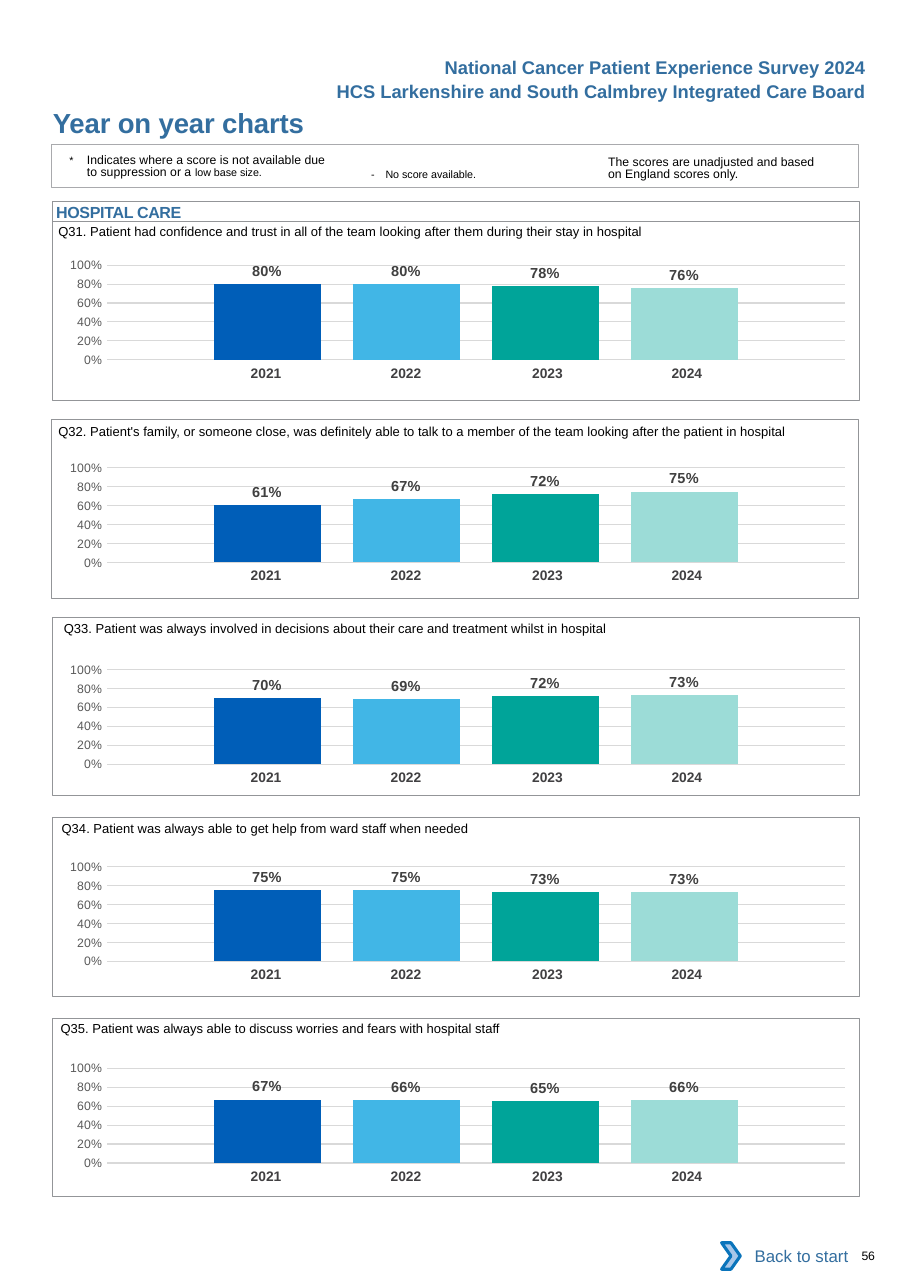
from lxml import etree
from pptx import Presentation
from pptx.chart.data import CategoryChartData
from pptx.dml.color import RGBColor
from pptx.enum.chart import XL_CHART_TYPE as CHART, XL_LABEL_POSITION as LABEL, XL_TICK_MARK as TICK
from pptx.enum.shapes import MSO_SHAPE as SHAPE
from pptx.enum.text import MSO_ANCHOR as ANCHOR, PP_ALIGN as ALIGN
from pptx.oxml.ns import qn
from pptx.util import Inches, Pt

color = RGBColor.from_string
BLUE, GREY = "336E9F", "939598"
YEARS = {"2021": "005EB8", "2022": "41B6E6", "2023": "00A499", "2024": "9CDCD7"}
YEAR_WIDTHS = [1.27, 1.27, 1.34, 1.27]
YEAR_RIGHT_INSETS = [0, 0, 0.04, 0.12]
PLOT_AREA = {"x": 0.079, "y": 0.145, "w": 0.915, "h": 0.666}
NO_TABLE_STYLE = "{2D5ABB26-0587-4C30-8999-92F81FD0307C}"

# question, its left and top, panel left and top, chart top, scores
QUESTIONS = [
    ("Q31. Patient had confidence and trust in all of the team looking after them during "
     "their stay in hospital", 0.53, 1.94, 0.48, 2.01, 2.22, (0.80, 0.80, 0.78, 0.76)),
    ("Q32. Patient's family, or someone close, was definitely able to talk to a member of the "
     "team looking after the patient in hospital",
     0.53, 3.75, 0.47, 3.81, 4.06, (0.61, 0.67, 0.72, 0.75)),
    ("Q33. Patient was always involved in decisions about their care and treatment whilst in "
     "hospital", 0.58, 5.54, 0.48, 5.6, 5.89, (0.70, 0.69, 0.72, 0.73)),
    ("Q34. Patient was always able to get help from ward staff when needed",
     0.56, 7.36, 0.48, 7.42, 7.68, (0.75, 0.75, 0.73, 0.73)),
    ("Q35. Patient was always able to discuss worries and fears with hospital staff",
     0.55, 9.17, 0.48, 9.24, 9.51, (0.67, 0.66, 0.65, 0.66)),
]

prs = Presentation()
prs.slide_width, prs.slide_height = Inches(8.26), Inches(11.69)
s = prs.slides.add_slide(prs.slide_layouts[6])


def add_box(left, top, width, height, shape=None, fill=None, line=None, weight=0.5,
            insets=(0, 0, 0, 0)):
    """Add a text box, or a preset shape when one is given."""
    place = [Inches(v) for v in (left, top, width, height)]
    if shape is None:
        sp = s.shapes.add_textbox(*place)
    else:
        sp = s.shapes.add_shape(shape, *place)
        sp.shadow.inherit = False
    if fill:
        sp.fill.solid()
        sp.fill.fore_color.rgb = color(fill)
    else:
        sp.fill.background()
    if line:
        sp.line.color.rgb = color(line)
        sp.line.width = Pt(weight)
    else:
        sp.line.fill.background()
    tf = sp.text_frame
    tf.word_wrap = True
    tf.vertical_anchor = ANCHOR.TOP
    tf.margin_left, tf.margin_top, tf.margin_right, tf.margin_bottom = map(Inches, insets)
    return tf


def write(tf, text, size=8, ink="000000", bold=False, align=ALIGN.LEFT, leading=None,
          hang=0, tracking=0):
    """Append a run to the first paragraph of a text frame."""
    p = tf.paragraphs[0]
    p.alignment = align
    if leading:
        p.line_spacing = Pt(leading)
    if hang:
        pPr = p._p.get_or_add_pPr()
        pPr.set("marL", str(Inches(hang)))
        pPr.set("indent", str(-Inches(hang)))
    r = p.add_run()
    r.text = text
    r.font.name, r.font.size, r.font.bold = "Arial", Pt(size), bold
    r.font.color.rgb = color(ink)
    if tracking:
        r._r.get_or_add_rPr().set("spc", str(round(tracking * 100)))


# Heading
for top, heading in [(0.46, "National Cancer Patient Experience Survey 2024"),
                     (0.68, "HCS Larkenshire and South Calmbrey Integrated Care Board")]:
    tf = add_box(2.7, top, 5.26, 0.3, insets=(0.1, 0.05, 0.1, 0.05))
    write(tf, heading, size=12, ink=BLUE, bold=True, align=ALIGN.RIGHT)
tf = add_box(0.48, 0.96, 4.5, 0.3)
write(tf, "Year on year charts", size=18, ink=BLUE, bold=True, tracking=-0.1)

# Notes on the scores
add_box(0.47, 1.31, 7.32, 0.39, SHAPE.RECTANGLE, line="A9AAAD", weight=0.75)
tf = add_box(0.63, 1.37, 2.4, 0.28, insets=(0, 0.03, 0, 0))
write(tf, "*", size=7, leading=8.1, hang=0.16)
write(tf, "\tIndicates where a score is not available due to suppression or a ",
      leading=8.1, hang=0.16)
write(tf, "low base size.", size=7, leading=8.1, hang=0.16)
tf = add_box(3.37, 1.52, 1.73, 0.13)
write(tf, "-\tNo score available.", size=7, hang=0.13)
tf = add_box(5.52, 1.39, 1.95, 0.27, insets=(0, 0.03, 0, 0))
write(tf, "The scores are unadjusted and based on England scores only.", leading=8.1)

# Section heading
tf = add_box(0.48, 1.83, 7.32, 0.18, SHAPE.RECTANGLE, line=GREY, insets=(0.03, 0.01, 0, 0))
write(tf, "HOSPITAL CARE", size=10.5, ink=BLUE, bold=True, tracking=-0.2)

for question, text_left, text_top, panel_left, panel_top, chart_top, scores in QUESTIONS:
    # Year labels
    table = s.shapes.add_table(1, len(YEARS), Inches(1.73), Inches(chart_top + 1.05),
                               Inches(sum(YEAR_WIDTHS)), Inches(0.27)).table
    table.first_row = table.horz_banding = False
    table._tbl.tblPr.find(qn("a:tableStyleId")).text = NO_TABLE_STYLE
    table.rows[0].height = Inches(0.27)
    for i, year in enumerate(YEARS):
        table.columns[i].width = Inches(YEAR_WIDTHS[i])
        cell = table.cell(0, i)
        cell.fill.background()
        cell.margin_left, cell.margin_right = Inches(0.1), Inches(YEAR_RIGHT_INSETS[i])
        write(cell.text_frame, year, size=9, ink="414042", bold=True, align=ALIGN.CENTER)

    # Column chart
    data = CategoryChartData(number_format="0%")
    data.categories = ["1"]
    for i, score in enumerate(scores, 1):
        data.add_series(f"Series {i}", [score])
    chart = s.shapes.add_chart(CHART.COLUMN_CLUSTERED, Inches(0.39), Inches(chart_top),
                               Inches(7.32), Inches(1.29), data).chart
    chart.has_legend = chart.has_title = False
    chart.font.name, chart.font.size = "Calibri", Pt(10)
    chart.font.color.rgb = color("000000")
    chart.category_axis.visible = False

    axis = chart.value_axis
    axis.minimum_scale, axis.maximum_scale, axis.major_unit = 0, 1, 0.2
    axis.major_tick_mark = axis.minor_tick_mark = TICK.NONE
    axis.format.line.fill.background()
    axis.major_gridlines.format.line.color.rgb = color("D9D9D9")
    axis.major_gridlines.format.line.width = Pt(0.75)
    axis.tick_labels.number_format = "0%"
    axis.tick_labels.number_format_is_linked = False
    font = axis.tick_labels.font
    font.name, font.size = "Arial", Pt(8)
    font.color.rgb = color("595959")

    plot = chart.plots[0]
    plot.gap_width, plot.overlap, plot.vary_by_categories = 200, -30, False
    for series, fill in zip(plot.series, YEARS.values()):
        series.format.fill.solid()
        series.format.fill.fore_color.rgb = color(fill)
        labels = series.data_labels
        labels.show_value, labels.position = True, LABEL.OUTSIDE_END
        labels.number_format, labels.number_format_is_linked = "0%", False
        font = labels.font
        font.name, font.size, font.bold = "Arial", Pt(9.5), True
        font.color.rgb = color("404040")

    # Fixed inner plot area
    plot_area = chart._chartSpace.chart.plotArea
    for old in plot_area.findall(qn("c:layout")):
        plot_area.remove(old)
    layout = etree.Element(qn("c:layout"))
    manual = etree.SubElement(layout, qn("c:manualLayout"))
    settings = {"layoutTarget": "inner", "xMode": "edge", "yMode": "edge", **PLOT_AREA}
    for name, value in settings.items():
        etree.SubElement(manual, qn(f"c:{name}")).set("val", str(value))
    plot_area.insert(0, layout)

    # Panel and question
    add_box(panel_left, panel_top, 7.32, 1.62, SHAPE.RECTANGLE, line=GREY)
    tf = add_box(text_left, text_top, 7.2, 0.24, insets=(0, 0.09, 0, 0))
    write(tf, question, size=8.5)

# Footer
tf = add_box(6.62, 11.19, 1.18, 0.42, SHAPE.RECTANGLE, fill="FFFFFF",
             insets=(0.1, 0.05, 0.1, 0.05))
tf.vertical_anchor = ANCHOR.MIDDLE
write(tf, "Back to start", size=11, ink=BLUE, align=ALIGN.RIGHT)
add_box(6.55, 11.28, 0.17, 0.24, SHAPE.CHEVRON, fill="A8C7E9", line="0A74BB", weight=2)
tf = add_box(7.82, 11.33, 0.4, 0.13)
write(tf, "56", tracking=-0.2)

prs.save("out.pptx")
